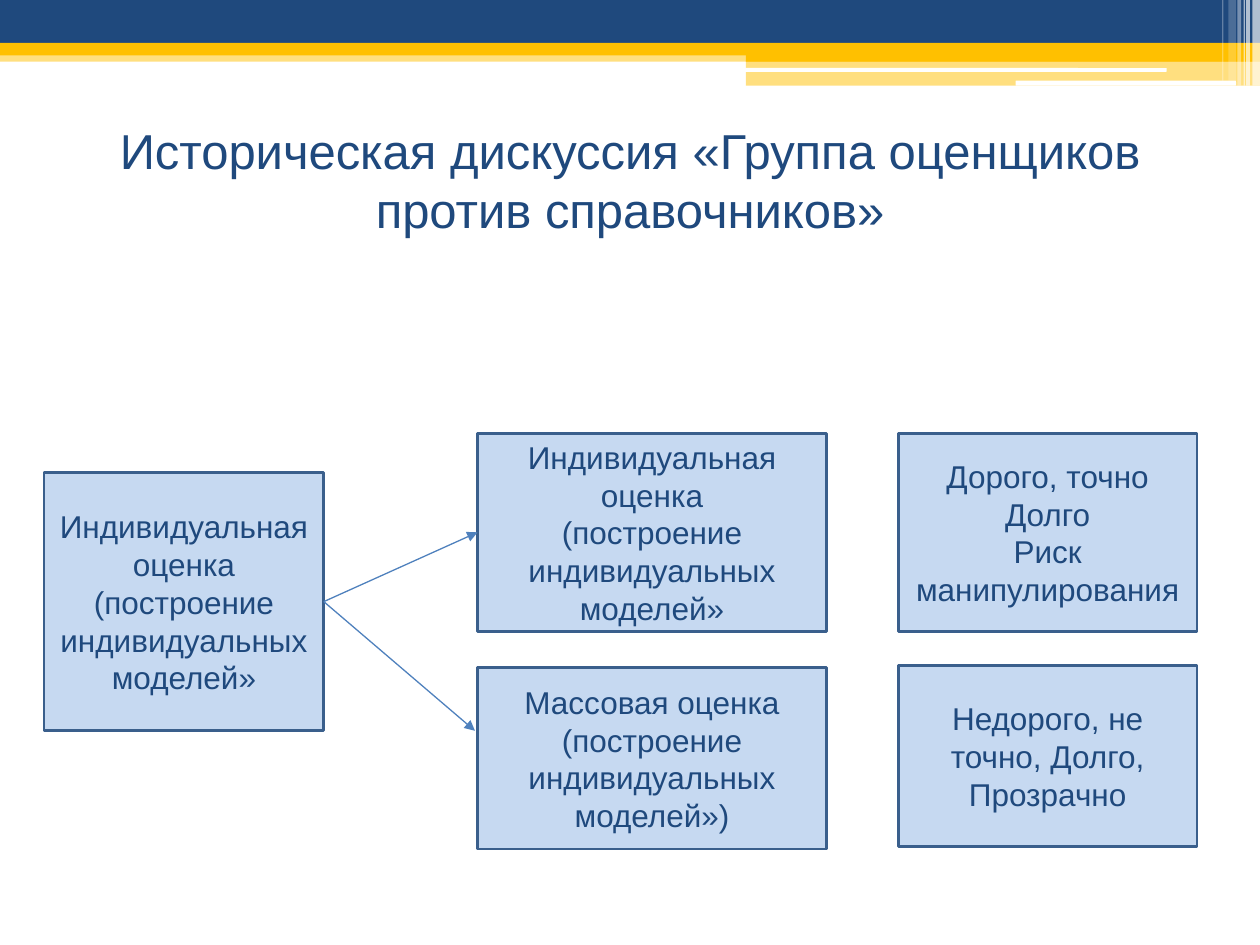
from lxml import etree
from pptx import Presentation
from pptx.dml.color import RGBColor
from pptx.enum.shapes import MSO_CONNECTOR, MSO_SHAPE
from pptx.enum.text import MSO_ANCHOR, PP_ALIGN
from pptx.oxml.ns import qn
from pptx.util import Inches, Pt

RECT = MSO_SHAPE.RECTANGLE
ROUNDED = MSO_SHAPE.ROUNDED_RECTANGLE
STRAIGHT = MSO_CONNECTOR.STRAIGHT
MIDDLE = MSO_ANCHOR.MIDDLE
CENTER = PP_ALIGN.CENTER
LEFT_SIDE, RIGHT_SIDE = 1, 3

NAVY = RGBColor(0x1F, 0x49, 0x7D)
GOLD = RGBColor(0xFF, 0xC0, 0x00)
WHITE = RGBColor(0xFF, 0xFF, 0xFF)
PALE_BLUE = RGBColor(0xC6, 0xD9, 0xF1)
BORDER_BLUE = RGBColor(0x3A, 0x5F, 0x8C)
ARROW_BLUE = RGBColor(0x4F, 0x81, 0xBD)

FONT = "Arial"
MODELS = "(построение индивидуальных моделей»"

HEADER_BANDS = [
    (RECT, (0, 0.4, 10, 0.09), GOLD, 50),
    (RECT, (0, 0, 10, 0.34), NAVY, 100),
    (RECT, (0, 0.34, 10, 0.1), GOLD, 100),
    (RECT, (5.92, 0.39, 4.08, 0.1), GOLD, 100),
    (RECT, (5.92, 0.48, 4.08, 0.2), GOLD, 50),
    (ROUNDED, (5.91, 0.54, 3.35, 0.03), WHITE, 100),
    (ROUNDED, (8.06, 0.64, 1.75, 0.04), WHITE, 100),
]
HEADER_STRIPES = [
    (9.94, 0.06, 0.68, 65),
    (9.89, 0.03, 0.68, 65),
    (9.87, 0.01, 0.68, 60),
    (9.82, 0.03, 0.68, 40),
    (9.75, 0.06, 0.64, 20),
    (9.7, 0.01, 0.64, 30),
]


def add_filled(slide, preset, box, color, opacity=100):
    shape = slide.shapes.add_shape(preset, *map(Inches, box))
    shape.shadow.inherit = False
    shape.fill.solid()
    shape.fill.fore_color.rgb = color
    shape.line.fill.background()
    if opacity < 100:
        rgb = shape.fill._xPr.find(".//" + qn("a:srgbClr"))
        etree.SubElement(rgb, qn("a:alpha"), val=str(opacity * 1000))
    return shape


def write_text(frame, paragraphs, size):
    for name, value in {"word_wrap": True, "vertical_anchor": MIDDLE}.items():
        setattr(frame, name, value)
    frame.text = "\n".join(paragraphs)
    for paragraph in frame.paragraphs:
        paragraph.alignment = CENTER
        for name, value in {"name": FONT, "size": Pt(size)}.items():
            setattr(paragraph.runs[0].font, name, value)
        paragraph.runs[0].font.color.rgb = NAVY


def add_header(slide):
    for preset, box, color, opacity in HEADER_BANDS:
        add_filled(slide, preset, box, color, opacity)
    for left, width, height, opacity in HEADER_STRIPES:
        add_filled(slide, RECT, (left, 0, width, height), WHITE, opacity)


def add_title(slide, title):
    heading = slide.shapes.add_textbox(*map(Inches, (0.5, 0.84, 9, 1.17)))
    write_text(heading.text_frame, [title], 28)


def add_card(slide, box, paragraphs):
    card = add_filled(slide, RECT, box, PALE_BLUE)
    card.line.color.rgb = BORDER_BLUE
    card.line.width = Pt(1.5)
    write_text(card.text_frame, paragraphs, 18)
    return card


def add_arrow(slide, source, end):
    arrow = slide.shapes.add_connector(STRAIGHT, 0, 0, *map(Inches, end))
    arrow.begin_connect(source, RIGHT_SIDE)
    arrow.line.color.rgb = ARROW_BLUE
    arrow.line.width = Pt(0.75)
    etree.SubElement(arrow.line._get_or_add_ln(), qn("a:tailEnd"), type="triangle")
    etree.SubElement(arrow._element.spPr, qn("a:effectLst"))
    return arrow


def main():
    deck = Presentation()
    deck.slide_width, deck.slide_height = Inches(10), Inches(7.5)
    slide = deck.slides.add_slide(deck.slide_layouts[6])

    add_header(slide)
    add_title(slide, "Историческая дискуссия «Группа оценщиков против справочников»")

    start = add_card(slide, (0.35, 3.75, 2.22, 2.05), ["Индивидуальная оценка", MODELS])
    individual = add_card(slide, (3.79, 3.44, 2.77, 1.57), ["Индивидуальная оценка", MODELS])
    add_card(slide, (3.79, 5.3, 2.77, 1.44), ["Массовая оценка", MODELS + ")"])
    add_card(slide, (7.13, 3.44, 2.37, 1.57), ["Дорого, точно", "Долго", "Риск манипулирования"])
    add_card(slide, (7.13, 5.28, 2.37, 1.44), ["Недорого, не точно, Долго,", "Прозрачно"])

    add_arrow(slide, start, (3.77, 5.8))
    add_arrow(slide, start, (3.77, 4.17)).end_connect(individual, LEFT_SIDE)

    deck.save("out.pptx")


if __name__ == "__main__":
    main()
